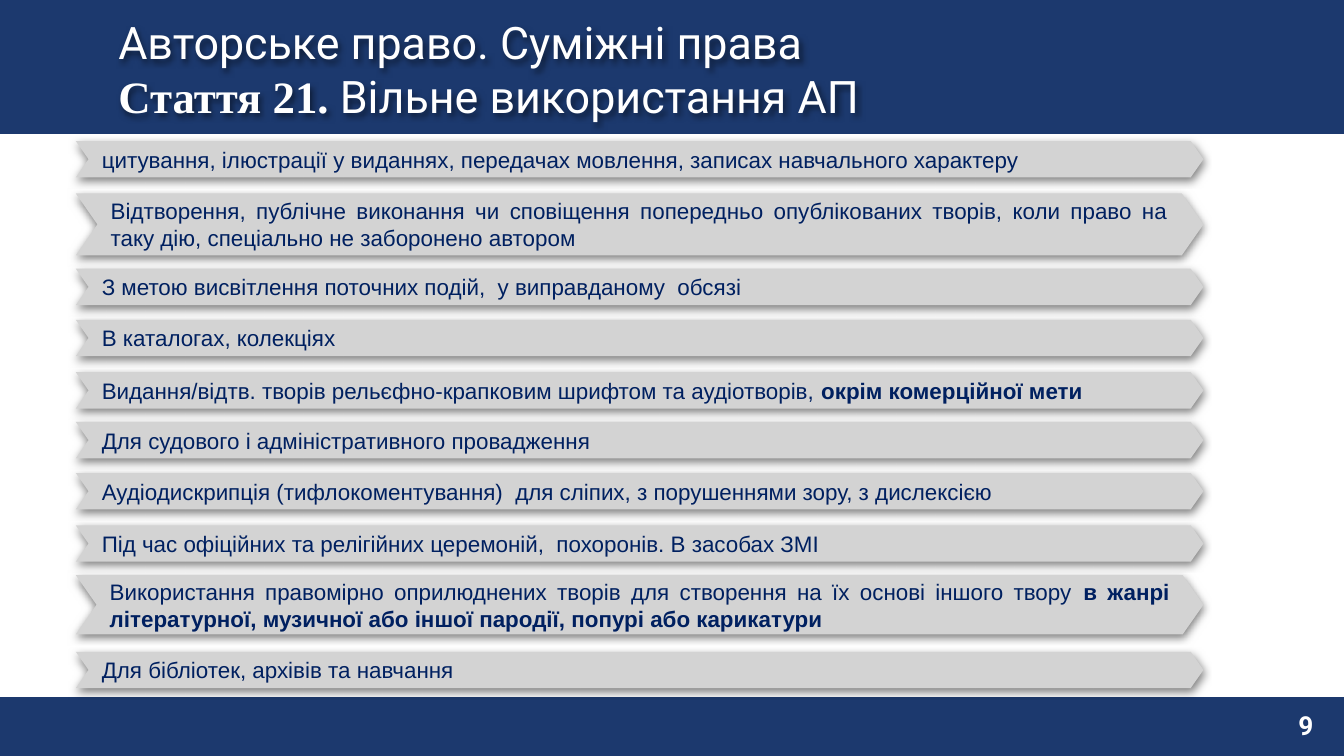
import pptx
import pptx.util
import pptx.dml.color
import pptx.enum.shapes
import pptx.enum.text
import pptx.oxml
import pptx.oxml.ns

deck = pptx.Presentation()
deck.slide_width = pptx.util.Inches(10)
deck.slide_height = deck.slide_width * 9 // 16
unit = deck.slide_width / 100
slide = deck.slides.add_slide(deck.slide_layouts[5])
shapes = slide.shapes
kinds = pptx.enum.shapes.MSO_SHAPE
aligns = pptx.enum.text.PP_ALIGN
hue = pptx.dml.color.RGBColor.from_string
navy, grey, white, ink = "1C396E", "D3D3D3", "FFFFFF", "002060"
pad = pptx.util.Inches(0.1)
frame = {
    "margin_left": pad, "margin_right": pad,
    "margin_top": pad, "margin_bottom": pad, "word_wrap": True,
    "vertical_anchor": pptx.enum.text.MSO_ANCHOR.MIDDLE,
}


def write(shape, runs, size, color, align):
    for key, value in frame.items():
        setattr(shape.text_frame, key, value)
    para = shape.text_frame.paragraphs[0]
    para.alignment = align
    for text, face, bold in runs:
        if text == "\n":
            para.add_line_break()
            continue
        run = para.add_run()
        run.text = text
        look = {"name": face, "size": pptx.util.Pt(size), "bold": bold}
        for key, value in look.items():
            setattr(run.font, key, value)
        run.font.color.rgb = hue(color)


def shade(shape, blur, dist, turn):
    shape.shadow.inherit = False
    glow = pptx.oxml.parse_xml(
        f'<a:outerShdw {pptx.oxml.ns.nsdecls("a")} blurRad="{pptx.util.Pt(blur)}" '
        f'dist="{pptx.util.Pt(dist)}" dir="{turn * 60000}" algn="bl" rotWithShape="0">'
        '<a:srgbClr val="000000"><a:alpha val="50000"/></a:srgbClr></a:outerShdw>')
    shape._element.spPr.find(pptx.oxml.ns.qn("a:effectLst")).append(glow)


for top, high in [(-0.1, 10), (51.9, 4.3)]:
    band = shapes.add_shape(
        kinds.RECTANGLE, *[int(n * unit) for n in (-0.2, top, 100.2, high)])
    band.shadow.inherit = False
    band.fill.solid()
    band.fill.fore_color.rgb = hue(navy)
    band.line.color.rgb = hue(navy)
    band.line.width = pptx.util.Pt(0.75)

title = shapes.title
spot = {"left": 7.8, "top": -0.1, "width": 88.8, "height": 10.4}
for key, value in spot.items():
    setattr(title, key, int(value * unit))
write(title, [
    ("Авторське право. Суміжні права", "Roboto", False),
    ("\n", None, None),
    ("Стаття 21. ", "Times New Roman", True),
    ("Вільне використання АП", "Roboto", False),
], 24, white, aligns.LEFT)
title.text_frame.auto_size = pptx.enum.text.MSO_AUTO_SIZE.NONE
shade(title, 3, 2, 45)
shapes._spTree.append(title._element)

page = shapes.add_textbox(*[int(n * unit) for n in (92.7, 51.8, 6, 4.3)])
write(page, [("9", "Roboto", True)], 14, white, aligns.RIGHT)

one = 2.7
bars = [
    (10.5, one, "цитування, ілюстрації у виданнях, передачах мовлення, записах навчального характеру", ""),
    (14.4, 4.6, "Відтворення, публічне виконання чи сповіщення попередньо опублікованих творів, коли право на таку дію, спеціально не заборонено автором", ""),
    (20, one, "З метою висвітлення поточних подій,  у виправданому  обсязі", ""),
    (23.8, one, "В каталогах, колекціях", ""),
    (27.7, one, "Видання/відтв. творів рельєфно-крапковим шрифтом та аудіотворів, ", "окрім комерційної мети"),
    (31.4, one, "Для судового і адміністративного провадження", ""),
    (35.2, one, "Аудіодискрипція (тифлокоментування)  для сліпих, з порушеннями зору, з дислексією", ""),
    (39.1, one, "Під час офіційних та релігійних церемоній,  похоронів. В засобах ЗМІ", ""),
    (42.8, 4.4, "Використання правомірно оприлюднених творів для створення на їх основі іншого твору ", "в жанрі літературної, музичної або іншої пародії, попурі або карикатури"),
    (48.5, one, "Для бібліотек, архівів та навчання", ""),
]
for top, high, plain, strong in bars:
    bar = shapes.add_shape(
        kinds.CHEVRON, *[int(n * unit) for n in (5.64, top, 83.9, high)])
    bar.adjustments[0] = 0.35
    bar.fill.solid()
    bar.fill.fore_color.rgb = hue(grey)
    bar.line.fill.background()
    shade(bar, 4.5, 1.5, 90)
    runs = [(plain, "Arial", False), (strong, "Arial", True)]
    write(bar, [run for run in runs if run[0]], 12, ink, aligns.JUSTIFY)

deck.save("out.pptx")
